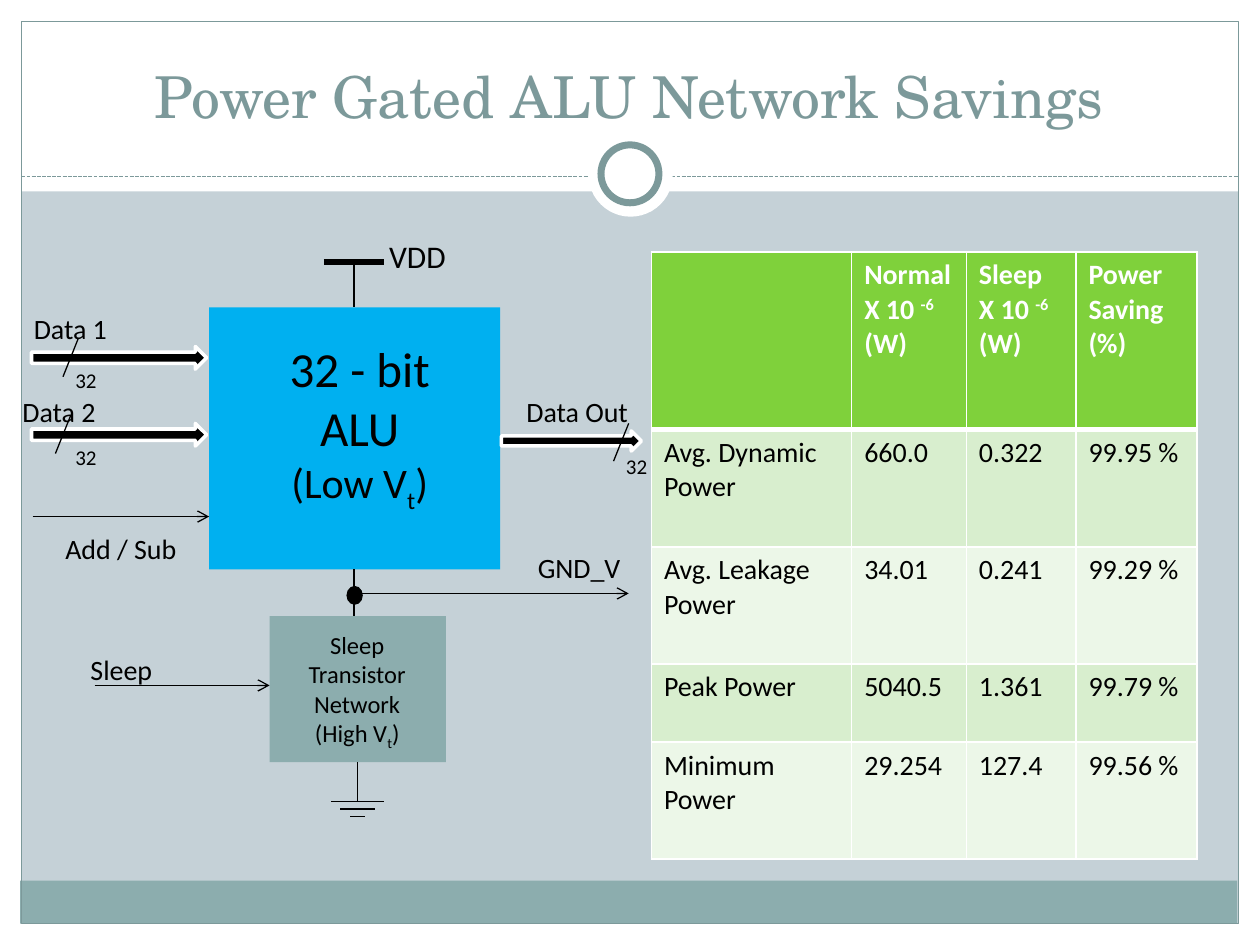
from collections import namedtuple
from lxml.etree import SubElement
from pptx import Presentation
from pptx.dml.color import RGBColor
from pptx.enum.dml import MSO_LINE
from pptx.enum.shapes import MSO_CONNECTOR, MSO_SHAPE
from pptx.enum.text import MSO_ANCHOR, PP_ALIGN
from pptx.oxml.ns import qn
from pptx.util import Inches, Pt

Theme = namedtuple("Theme", "white black slate teal backdrop blue green band_dark band_light "
                   "title_font body_font title block block_note supply label note bus")
theme = Theme("FFFFFF", "000000", "7C999A", "8CADAE", "C5D1D7", "00B0F0", "7FD13B",
              "D8EECE", "ECF7E8", "TeX Gyre Schola", "Calibri", 33, 28, 24, 18, 16, 14, 12)


def write_paragraphs(text_frame, lines, color, align=PP_ALIGN.LEFT, bold=False, name=theme.body_font):
    for index, (size, *runs) in enumerate(lines):
        paragraph = text_frame.add_paragraph() if index else text_frame.paragraphs[0]
        paragraph.alignment = align
        paragraph.font.name = name
        paragraph.font.size = Pt(size)
        paragraph.font.bold = bold
        paragraph.font.color.rgb = RGBColor.from_string(color)
        for part in runs:
            text, baseline = part if isinstance(part, tuple) else (part, 0)
            run = paragraph.add_run()
            run.text = text
            if baseline:
                run.font._element.set("baseline", str(baseline * 1000))


def draw_shapes(shapes, rows):
    for kind, box, fill, line, width in rows:
        shape = shapes.add_shape(kind, *map(Inches, box))
        shape.shadow.inherit = False
        if fill:
            shape.fill.solid()
            shape.fill.fore_color.rgb = RGBColor.from_string(fill)
        else:
            shape.fill.background()
        if line:
            shape.line.color.rgb = RGBColor.from_string(line)
            shape.line.width = Pt(width)
        else:
            shape.line.fill.background()


presentation = Presentation()
presentation.slide_width = Inches(10)
presentation.slide_height = Inches(7.5)
slide = presentation.slides.add_slide(presentation.slide_layouts[5])
slide.background.fill.solid()
slide.background.fill.fore_color.rgb = RGBColor.from_string(theme.backdrop)
shapes = slide.shapes

RECTANGLE, OVAL, ARROW = MSO_SHAPE.RECTANGLE, MSO_SHAPE.OVAL, MSO_SHAPE.RIGHT_ARROW
margins = [(0, 7.33, 10, 0.17), (0, 0, 10, 1.52), (0, 0, 0.17, 7.5), (9.83, 0, 0.17, 7.5)]
draw_shapes(shapes, [(RECTANGLE, box, theme.white, None, 0) for box in margins] + [
    (RECTANGLE, (0.16, 6.99, 9.66, 0.34), theme.teal, None, 0),
    (RECTANGLE, (0.17, 0.17, 9.66, 7.16), None, theme.slate, 0.75),
])

divider = shapes.add_connector(MSO_CONNECTOR.STRAIGHT, Inches(0.17), Inches(1.4), Inches(9.83), Inches(1.4))
divider.line.color.rgb = RGBColor.from_string(theme.slate)
divider.line.width = Pt(0.75)
divider.line.dash_style = MSO_LINE.SQUARE_DOT
SubElement(divider._element.spPr, qn("a:effectLst"))

draw_shapes(shapes, [
    (OVAL, (4.67, 1.05, 0.67, 0.67), theme.white, None, 0),
    (OVAL, (4.77, 1.15, 0.46, 0.46), theme.white, theme.slate, 4),
])

title = shapes.title
title.left, title.top, title.width, title.height = map(Inches, (0.33, 0.25, 9.33, 0.83))
title.text_frame.vertical_anchor = MSO_ANCHOR.BOTTOM
write_paragraphs(title.text_frame, [(theme.title, "Power Gated ALU Network Savings")],
                 theme.slate, PP_ALIGN.CENTER, name=theme.title_font)
divider.element.getparent().append(title.element)

header = [
    [],
    [["Normal"], ["X 10 ", ("-6", 30)], ["(W)"]],
    [["Sleep"], ["X 10 ", ("-6", 30)], ["(W)"]],
    [["Power"], ["Saving"], ["(%)"]],
]
measurements = [
    ("Avg. Dynamic Power", "660.0", "0.322", "99.95 %"),
    ("Avg. Leakage Power", "34.01", "0.241", "99.29 %"),
    ("Peak Power", "5040.5", "1.361", "99.79 %"),
    ("Minimum Power", "29.254", "127.4", "99.56 %"),
]
table_rows = [header] + [[[[text]] for text in row] for row in measurements]
table = shapes.add_table(5, 4, Inches(5.17), Inches(2), Inches(4.33), Inches(4.82)).table
for column, width in zip(table.columns, (1.59, 0.91, 0.87, 0.96)):
    column.width = Inches(width)
for row, height in zip(table.rows, (1.41, 0.93, 0.93, 0.62, 0.93)):
    row.height = Inches(height)
for row_index, row in enumerate(table_rows):
    is_header = row_index == 0
    fill = theme.green if is_header else (theme.band_light, theme.band_dark)[row_index % 2]
    for column_index, lines in enumerate(row):
        cell = table.cell(row_index, column_index)
        write_paragraphs(cell.text_frame, [(theme.label, *runs) for runs in lines],
                         theme.white if is_header else theme.black, bold=is_header)
        properties = cell._tc.get_or_add_tcPr()
        for edge in ("lnL", "lnR", "lnT", "lnB"):
            heavy = (row_index, edge) in ((0, "lnB"), (1, "lnT"))
            border = SubElement(properties, qn(f"a:{edge}"), w=str(Pt(3 if heavy else 1)))
            SubElement(SubElement(border, qn("a:solidFill")), qn("a:srgbClr"), val=theme.white)
        cell.fill.solid()
        cell.fill.fore_color.rgb = RGBColor.from_string(fill)

buses = [(0.25, 2.75, 1.39, 0.18), (0.25, 3.36, 1.39, 0.18), (3.98, 3.42, 1.11, 0.16)]
draw_shapes(shapes, [
    (RECTANGLE, (1.66, 2.44, 2.31, 2.08), theme.blue, None, 0),
    (RECTANGLE, (2.14, 4.89, 1.4, 1.16), theme.teal, None, 0),
    (OVAL, (2.75, 4.65, 0.13, 0.15), theme.black, None, 0),
] + [(ARROW, box, theme.black, theme.white, 2) for box in buses])

bus_slashes = [(x, y, x - 0.12, y + 0.3, 0.75, False) for x, y in ((0.62, 2.69), (0.56, 3.3), (4.99, 3.36))]
ground_bars = [(2.84 - half, y, 2.84 + half, y, 0.75, False)
               for half, y in ((0.21, 6.36), (0.14, 6.42), (0.06, 6.48))]
wires = [
    (0.26, 4.1, 1.66, 4.1, 0.75, True),
    (0.75, 5.44, 2.14, 5.44, 0.75, True),
    (2.81, 4.71, 4.99, 4.71, 0.75, True),
    (2.81, 2.08, 2.81, 2.44, 0.75, False),
    (2.81, 4.52, 2.81, 4.89, 0.75, False),
    (2.84, 6.05, 2.84, 6.36, 0.75, False),
    (2.57, 2.08, 3.05, 2.08, 3, False),
]
for *ends, width, has_arrowhead in wires + bus_slashes + ground_bars:
    wire = shapes.add_connector(MSO_CONNECTOR.STRAIGHT, *map(Inches, ends))
    wire.line.color.rgb = RGBColor.from_string(theme.black)
    wire.line.width = Pt(width)
    if has_arrowhead:
        SubElement(wire.line._get_or_add_ln(), qn("a:tailEnd"), type="arrow")
    SubElement(wire._element.spPr, qn("a:effectLst"))

signal_labels = [
    (0.17, 2.42, "Data 1"), (0.08, 3.08, "Data 2"), (0.42, 4.17, "Add / Sub"),
    (4.08, 3.08, "Data Out"), (0.62, 5.13, "Sleep"), (4.17, 4.32, "GND_V"),
]
bus_widths = [(0.5, 2.87), (0.5, 3.48), (4.87, 3.55)]
texts = [((x, y, 1.27, 0.37), PP_ALIGN.LEFT, [(theme.label, text)]) for x, y, text in signal_labels]
texts += [((x, y, 0.46, 0.3), PP_ALIGN.LEFT, [(theme.bus, "32")]) for x, y in bus_widths]
texts += [
    ((2.99, 1.83, 1.27, 0.4), PP_ALIGN.LEFT, [(theme.supply, "VDD")]),
    ((1.92, 2.64, 1.87, 1.9), PP_ALIGN.CENTER, [
        (theme.block, "32 - bit"), (theme.block, "ALU"),
        (theme.block_note, "(Low V", ("t", -25), ")")]),
    ((2.2, 4.95, 1.27, 1.03), PP_ALIGN.CENTER, [
        (theme.note, "Sleep Transistor Network"), (theme.note, "(High V", ("t", -25), ")")]),
]
for box, align, lines in texts:
    text_box = shapes.add_textbox(*map(Inches, box))
    text_box.text_frame.word_wrap = True
    write_paragraphs(text_box.text_frame, lines, theme.black, align)

presentation.save("out.pptx")
